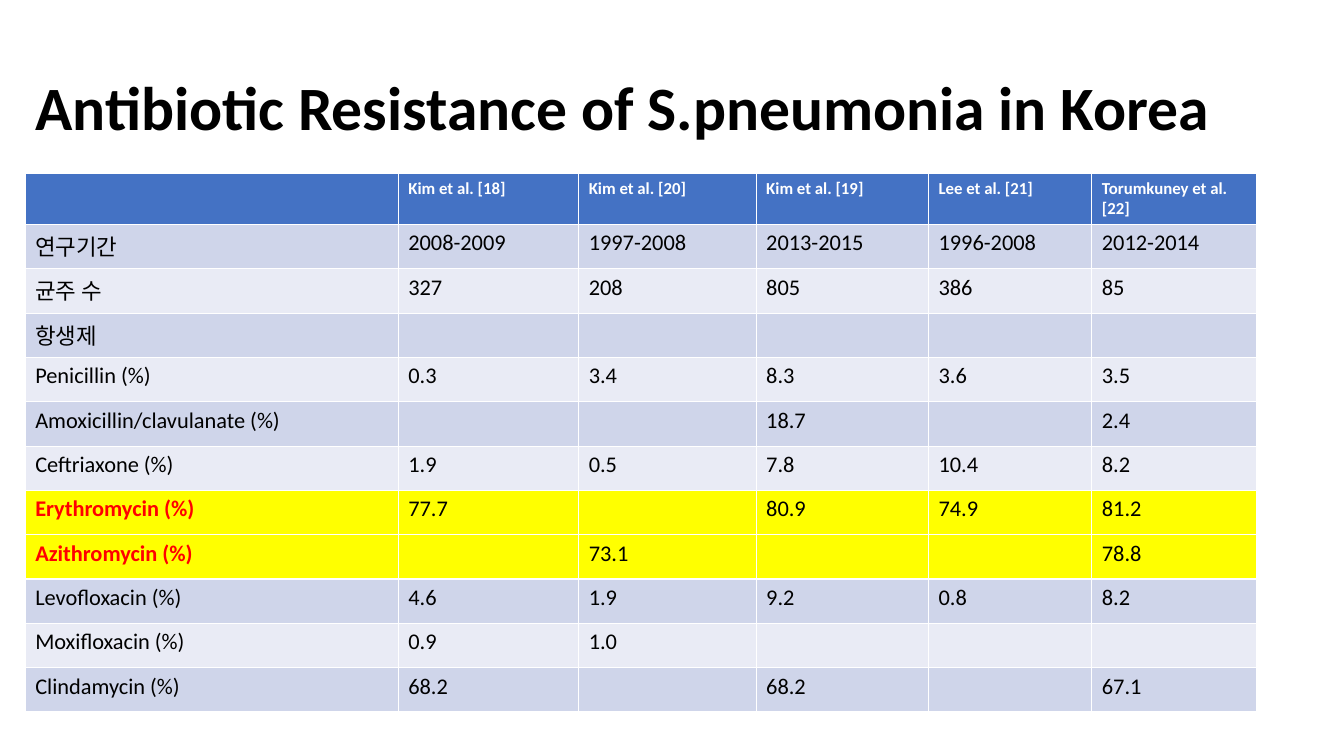
from dataclasses import dataclass
from itertools import chain

from pptx import Presentation
from pptx.dml.color import RGBColor as Color
from pptx.enum.text import MSO_ANCHOR as Anchor, MSO_AUTO_SIZE as AutoSize, PP_ALIGN as Align
from pptx.util import Pt

PX = 9144  # EMU; 100 px to the inch


@dataclass(frozen=True)
class Theme:
    font: str = "Calibri"
    ink: str = "000000"
    paper: str = "FFFFFF"
    header: str = "4472C4"
    bands: tuple = ("CFD5EA", "E9EBF5")
    highlight: str = "FFFF00"
    alert: str = "FF0000"
    title_size: int = 44
    header_size: int = 12
    body_size: int = 16


THEME = Theme()

TITLE = "Antibiotic Resistance of S.pneumonia in Korea"
COLUMN_WIDTHS = (370, 179, 176, 171, 162, 163)
HEADER_HEIGHT, ROW_HEIGHT = 48, 44
STUDIES = ("", "Kim et al. [18]", "Kim et al. [20]", "Kim et al. [19]",
           "Lee et al. [21]", "Torumkuney et al. [22]")
FINDINGS = (
    ("연구기간", "2008-2009", "1997-2008", "2013-2015", "1996-2008", "2012-2014"),
    ("균주 수", "327", "208", "805", "386", "85"),
    ("항생제", "", "", "", "", ""),
    ("Penicillin (%)", "0.3", "3.4", "8.3", "3.6", "3.5"),
    ("Amoxicillin/clavulanate (%)", "", "", "18.7", "", "2.4"),
    ("Ceftriaxone (%)", "1.9", "0.5", "7.8", "10.4", "8.2"),
    ("Erythromycin (%)", "77.7", "", "80.9", "74.9", "81.2"),
    ("Azithromycin (%)", "", "73.1", "", "", "78.8"),
    ("Levofloxacin (%)", "4.6", "1.9", "9.2", "0.8", "8.2"),
    ("Moxifloxacin (%)", "0.9", "1.0", "", "", ""),
    ("Clindamycin (%)", "68.2", "", "68.2", "", "67.1"),
)
MACROLIDES = ("Erythromycin (%)", "Azithromycin (%)")


def set_all(target, values):
    for name, value in values.items():
        setattr(target, name, value)


def write(para, text, size, color, bold):
    span = para.add_run()
    span.text = text
    set_all(span.font, {"name": THEME.font, "size": Pt(size), "bold": bold})
    span.font.color.rgb = Color.from_string(color)


def add_title(page, left, top, width, height):
    box = page.shapes.title
    set_all(box, {"left": left * PX, "top": top * PX,
                  "width": width * PX, "height": height * PX})
    set_all(box.text_frame, {"word_wrap": True, "auto_size": AutoSize.NONE,
                             "vertical_anchor": Anchor.MIDDLE})
    para = box.text_frame.paragraphs[0]
    set_all(para, {"alignment": Align.LEFT, "line_spacing": 0.9})
    write(para, TITLE, THEME.title_size, THEME.ink, True)


def row_style(index, label):
    """Return the fill, text size, and (colour, bold) of the label and of the values."""
    if index == 0:
        return THEME.header, THEME.header_size, (THEME.paper, True), (THEME.paper, True)
    plain = (THEME.ink, False)
    if label in MACROLIDES:
        return THEME.highlight, THEME.body_size, (THEME.alert, True), plain
    return THEME.bands[(index - 1) % 2], THEME.body_size, plain, plain


def add_resistance_table(page, left, top):
    row_count = len(FINDINGS) + 1
    height = HEADER_HEIGHT + ROW_HEIGHT * len(FINDINGS)
    table = page.shapes.add_table(row_count, len(STUDIES), left * PX, top * PX,
                                  sum(COLUMN_WIDTHS) * PX, height * PX).table
    for column, width in zip(table.columns, COLUMN_WIDTHS):
        column.width = width * PX
    for index, texts in enumerate(chain([STUDIES], FINDINGS)):
        row = table.rows[index]
        row.height = (ROW_HEIGHT if index else HEADER_HEIGHT) * PX
        fill, size, label_look, value_look = row_style(index, texts[0])
        for position, (cell, text) in enumerate(zip(row.cells, texts)):
            cell.fill.solid()
            cell.fill.fore_color.rgb = Color.from_string(fill)
            if text:
                color, bold = value_look if position else label_look
                write(cell.text_frame.paragraphs[0], text, size, color, bold)


def main():
    deck = Presentation()
    set_all(deck, {"slide_width": 1333 * PX, "slide_height": 750 * PX})
    page = deck.slides.add_slide(deck.slide_layouts.get_by_name("Title Only"))
    add_title(page, 25, 59, 1217, 101)
    add_resistance_table(page, 25, 172)
    deck.save("out.pptx")


if __name__ == "__main__":
    main()
